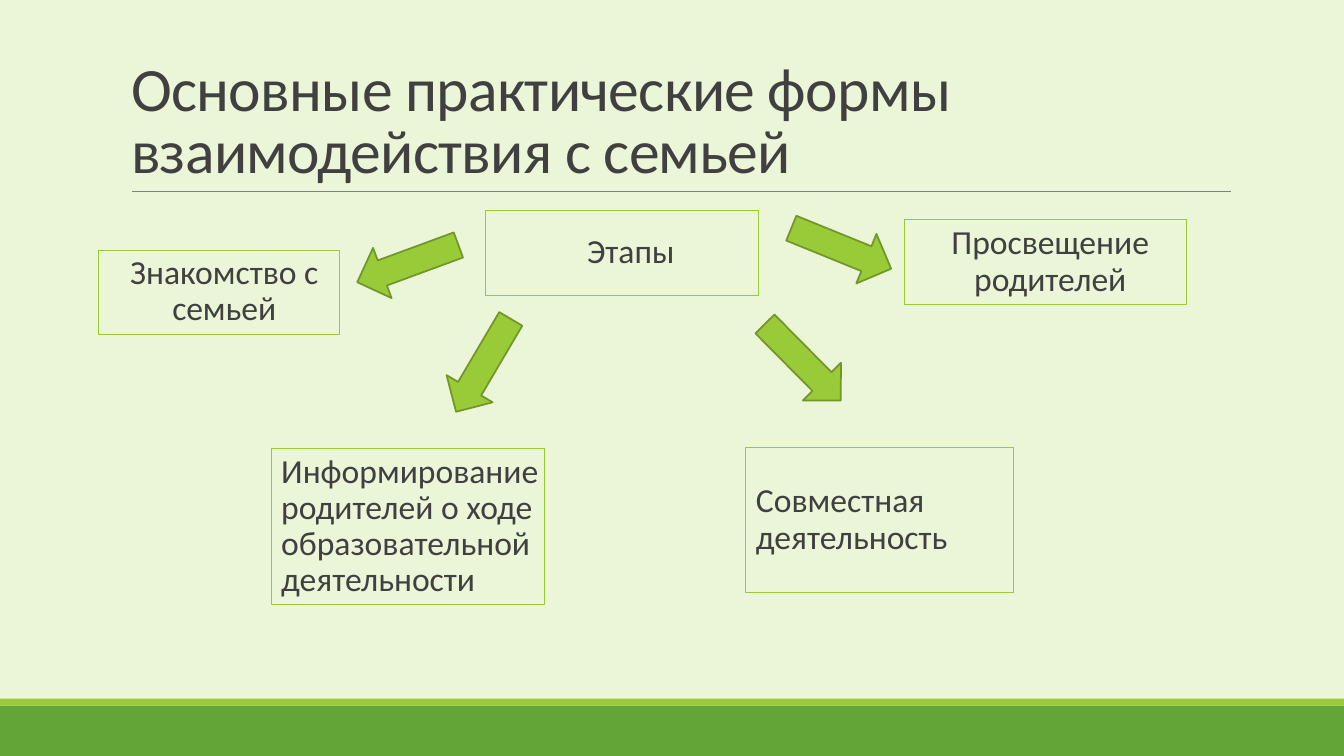
from collections import namedtuple

from lxml.etree import SubElement
from pptx import Presentation
from pptx.dml.color import RGBColor
from pptx.enum.shapes import MSO_CONNECTOR, MSO_SHAPE
from pptx.enum.text import MSO_ANCHOR, MSO_AUTO_SIZE, PP_ALIGN
from pptx.oxml.ns import qn
from pptx.util import Pt

BACKGROUND = RGBColor(0xEB, 0xF5, 0xD7)
GREEN = RGBColor(0x63, 0xA5, 0x37)
LIME = RGBColor(0x99, 0xCB, 0x38)
ARROW_EDGE = RGBColor(0x71, 0x96, 0x29)
RULE_GRAY = RGBColor(0x80, 0x80, 0x80)
TEXT_GRAY = RGBColor(0x40, 0x40, 0x40)

FONT = "Calibri"
SLIDE_WIDTH, SLIDE_HEIGHT = 960, 540
ARROW_WIDTH, ARROW_LENGTH = 38.2, 77
BULLET_INDENT = 7.2
COMPARISON_LAYOUT = 4

Box = namedtuple("Box", "left top width height")

TITLE = "Основные практические формы взаимодействия с семьей"
TITLE_BOX = Box(86.4, 22.3, 792, 114.5)
HUB_BOX = Box(347, 150.5, 195.1, 60.5)
STAGES = [
    ("Информирование родителей о ходе образовательной деятельности",
     Box(193.7, 320.4, 195.1, 111.6), PP_ALIGN.LEFT, MSO_ANCHOR.MIDDLE),
    ("Просвещение родителей",
     Box(645.8, 157, 201.6, 60.5), PP_ALIGN.CENTER, MSO_ANCHOR.MIDDLE),
    ("Совместная деятельность",
     Box(532.8, 319.7, 191.5, 103.7), PP_ALIGN.LEFT, MSO_ANCHOR.MIDDLE),
    ("Знакомство с семьей",
     Box(70.6, 178.6, 172.1, 60.5), PP_ALIGN.CENTER, MSO_ANCHOR.TOP),
]
# Centre x, centre y, rotation in degrees
ARROWS = [
    (291.3, 188.3, 69.8),
    (345.3, 261, 30.5),
    (600.9, 177.5, 292.1),
    (573.5, 258.8, 315.3),
]


def place(shape, box):
    shape.left, shape.top, shape.width, shape.height = map(Pt, box)


def add_filled_shape(slide, kind, box, color):
    shape = slide.shapes.add_shape(kind, *map(Pt, box))
    shape.shadow.inherit = False
    shape.fill.solid()
    shape.fill.fore_color.rgb = color
    shape.line.fill.background()
    return shape


def add_text(paragraph, text, size):
    run = paragraph.add_run()
    run.text = text
    run.font.name = FONT
    run.font.size = Pt(size)
    run.font.bold = False
    run.font.color.rgb = TEXT_GRAY
    return run


def add_footer_bands(slide, box):
    """Draw a thin lime strip along the top of a green band."""
    strip_height = 5
    add_filled_shape(slide, MSO_SHAPE.RECTANGLE, box, GREEN)
    strip = Box(box.left, box.top - strip_height, box.width, strip_height)
    add_filled_shape(slide, MSO_SHAPE.RECTANGLE, strip, LIME)


def add_title(slide, box):
    """Fill the title placeholder and underline it with a thin rule."""
    title = slide.shapes.title
    place(title, box)
    frame = title.text_frame
    frame.word_wrap = True
    frame.auto_size = MSO_AUTO_SIZE.NONE
    frame.vertical_anchor = MSO_ANCHOR.BOTTOM
    paragraph = frame.paragraphs[0]
    paragraph.alignment = PP_ALIGN.LEFT
    paragraph.line_spacing = 0.85
    run = add_text(paragraph, TITLE, 44)
    run.font._element.set("spc", "-50")

    rule_left, rule_y = box.left + 7.9, box.top + box.height
    rule = slide.shapes.add_connector(
        MSO_CONNECTOR.STRAIGHT, Pt(rule_left), Pt(rule_y),
        Pt(rule_left + 784.8), Pt(rule_y))
    rule.line.color.rgb = RULE_GRAY
    rule.line.width = Pt(0.5)
    SubElement(rule._element.spPr, qn("a:effectLst"))


def set_blank_bullet(paragraph):
    properties = paragraph._p.get_or_add_pPr()
    properties.set("marL", str(Pt(BULLET_INDENT)))
    properties.set("indent", str(-Pt(BULLET_INDENT)))
    bullet_color = SubElement(properties, qn("a:buClr"))
    SubElement(bullet_color, qn("a:srgbClr")).set("val", str(LIME))
    SubElement(properties, qn("a:buChar")).set("char", " ")


def format_stage(shape, text, box, alignment, anchor):
    """Turn a placeholder or rectangle into an outlined stage box."""
    place(shape, box)
    shape.fill.background()
    shape.line.color.rgb = LIME
    shape.line.width = Pt(0.75)
    frame = shape.text_frame
    frame.word_wrap = True
    frame.auto_size = MSO_AUTO_SIZE.NONE
    frame.vertical_anchor = anchor
    frame.margin_left = frame.margin_right = 0
    frame.margin_top = frame.margin_bottom = Pt(3.6)
    paragraph = frame.paragraphs[0]
    paragraph.alignment = alignment
    paragraph.line_spacing = 0.9
    paragraph.space_before = Pt(12)
    paragraph.space_after = Pt(2)
    set_blank_bullet(paragraph)
    add_text(paragraph, text, 24)


def add_stages(slide, hub_box):
    bodies = [shape for shape in slide.placeholders
              if shape.placeholder_format.idx != 0]
    for body, stage in zip(bodies, STAGES):
        format_stage(body, *stage)
    hub = slide.shapes.add_shape(MSO_SHAPE.RECTANGLE, *map(Pt, hub_box))
    hub.shadow.inherit = False
    format_stage(hub, "Этапы", hub_box, PP_ALIGN.CENTER, MSO_ANCHOR.MIDDLE)


def add_arrow(slide, center_x, center_y, rotation):
    box = Box(center_x - ARROW_WIDTH / 2, center_y - ARROW_LENGTH / 2,
              ARROW_WIDTH, ARROW_LENGTH)
    arrow = add_filled_shape(slide, MSO_SHAPE.DOWN_ARROW, box, LIME)
    arrow.line.color.rgb = ARROW_EDGE
    arrow.line.width = Pt(1.25)
    arrow.rotation = rotation


def main():
    presentation = Presentation()
    presentation.slide_width = Pt(SLIDE_WIDTH)
    presentation.slide_height = Pt(SLIDE_HEIGHT)
    layout = presentation.slide_layouts[COMPARISON_LAYOUT]
    slide = presentation.slides.add_slide(layout)
    slide.background.fill.solid()
    slide.background.fill.fore_color.rgb = BACKGROUND

    add_footer_bands(slide, Box(0, SLIDE_HEIGHT - 36, SLIDE_WIDTH, 36))
    add_title(slide, TITLE_BOX)
    add_stages(slide, HUB_BOX)
    for arrow in ARROWS:
        add_arrow(slide, *arrow)
    presentation.save("out.pptx")


if __name__ == "__main__":
    main()
